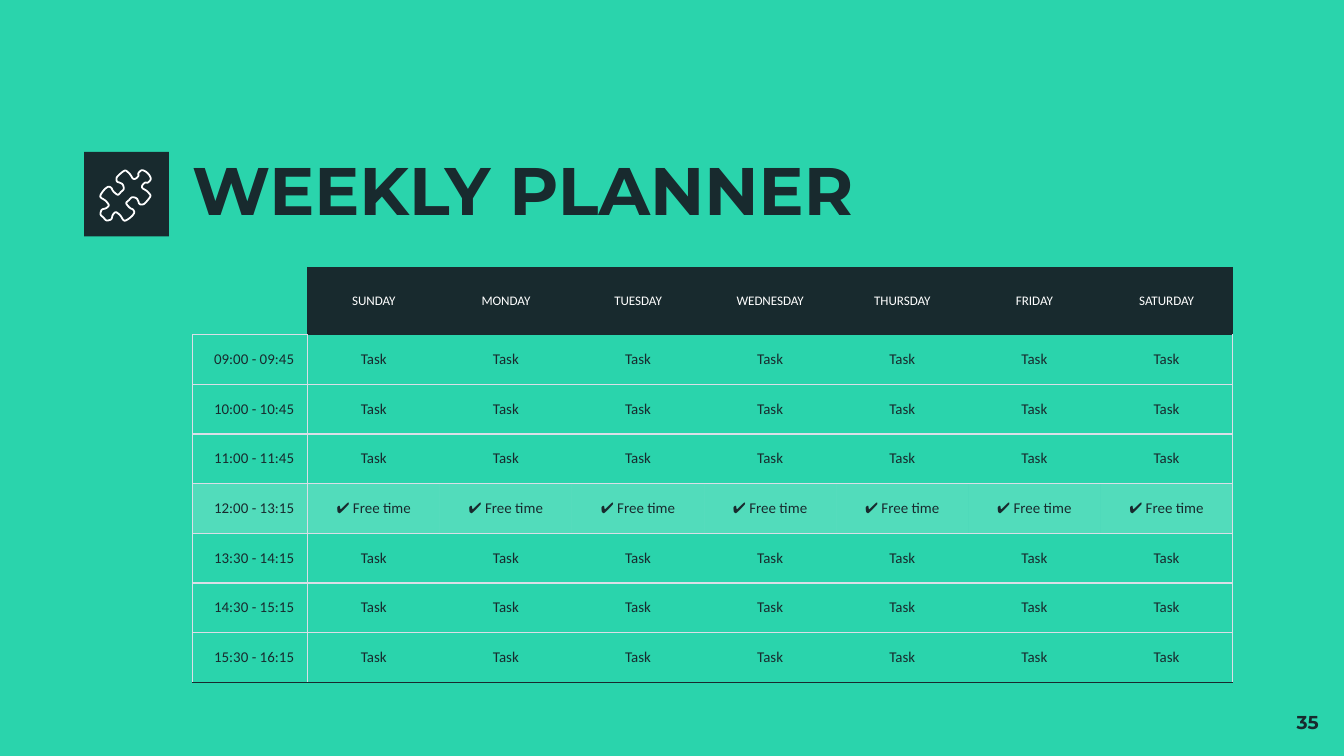
"""Build a weekly planner slide with a timetable and a puzzle icon."""
from dataclasses import dataclass
from typing import NamedTuple

import lxml.etree
import pptx
import pptx.dml.color
import pptx.enum.shapes
import pptx.enum.text
import pptx.oxml.ns
import pptx.util

PX = 3048
COLORS = {"teal": "2AD4AC", "ink": "182A2E", "white": "FFFFFF", "line": "DADEE7"}
ALIGN = pptx.enum.text.PP_ALIGN
MIDDLE = pptx.enum.text.MSO_ANCHOR.MIDDLE
NO_STYLE = "{2D5ABB26-0587-4C30-8999-92F81FD0307C}"

DAYS = ["SUNDAY", "MONDAY", "TUESDAY", "WEDNESDAY", "THURSDAY", "FRIDAY", "SATURDAY"]
TIME_W, DAY_W, HEAD_H, ROW_H, INSET = 257, 295, 146, 111, 30
BORDER_PT, SHADE_OPACITY = 0.75, 19

ICON_SPAN, ICON_UNIT, CURVE_STEPS = 37, 3, 4
TOP_SOCKET = [(32, 0), (30, 0), (28, 2), (28, 4), (26, 6), (24, 6), (22, 3)]
TOP_CORNER = [(20, 1), (18, 0), (15, 2), (12, 5), (12, 8), (14, 9), (16, 10)]
LEFT_SOCKET = [(17, 12), (17, 14), (15, 16), (13, 18), (11, 17), (9, 15), (8, 13)]
LEFT_CORNER = [(6, 12), (4, 13), (2, 15), (0, 18), (0, 20), (3, 22)]
LEFT_KNOB = [(5, 24), (6, 26), (4, 28), (1, 29), (0, 31), (0, 33)]
KNOB_TIP_TOP, KNOB_TIP_BOTTOM = (35, 2), (2, 35)


class Box(NamedTuple):
    x: int
    y: int
    w: int
    h: int

    def emu(self) -> list[int]:
        return [v * PX for v in self]


@dataclass
class Slot:
    time: str
    entry: str = "Task"
    shaded: bool = False


SLOTS = [
    Slot("09:00 - 09:45"),
    Slot("10:00 - 10:45"),
    Slot("11:00 - 11:45"),
    Slot("12:00 - 13:15", "✔ Free time", True),
    Slot("13:30 - 14:15"),
    Slot("14:30 - 15:15"),
    Slot("15:30 - 16:15"),
]


def rgb(name: str) -> pptx.dml.color.RGBColor:
    return pptx.dml.color.RGBColor.from_string(COLORS[name])


def add_xml(parent, tag: str, **attributes: str):
    return lxml.etree.SubElement(parent, pptx.oxml.ns.qn(tag), **attributes)


def write(tf, text: str, *, size: float, font: str = "Calibri", color: str = "ink",
          bold: bool = False, align=ALIGN.LEFT, spacing: float = 1.0) -> None:
    p = tf.paragraphs[0]
    p.alignment, p.line_spacing = align, spacing
    r = p.add_run()
    r.text = text
    r.font.size, r.font.name, r.font.bold = pptx.util.Pt(size), font, bold
    r.font.color.rgb = rgb(color)


def set_margins(target, px: int) -> None:
    for side in ("left", "top", "right", "bottom"):
        setattr(target, f"margin_{side}", px * PX)


def set_borders(cell, edges: dict[str, str]) -> None:
    tcPr = cell._tc.get_or_add_tcPr()
    for side in "LRTB":
        ln = add_xml(tcPr, f"a:ln{side}", w=str(pptx.util.Pt(BORDER_PT)))
        if side in edges:
            add_xml(add_xml(ln, "a:solidFill"), "a:srgbClr", val=COLORS[edges[side]])
        else:
            add_xml(ln, "a:noFill")


def fill_cell(cell, color: str, opacity: int = 100) -> None:
    cell.fill.solid()
    cell.fill.fore_color.rgb = rgb(color)
    if opacity < 100:
        solid = cell._tc.tcPr.find(pptx.oxml.ns.qn("a:solidFill"))
        add_xml(solid[0], "a:alpha", val=str(opacity * 1000))


def header_edges(col: int) -> dict[str, str]:
    if col == 0:
        return {"R": "ink", "B": "line"}
    edges = {"T": "ink", "B": "ink"}
    if col == 1:
        edges["L"] = "ink"
    if col == len(DAYS):
        edges["R"] = "ink"
    return edges


def slot_edges(row: int, col: int) -> dict[str, str]:
    under_header = row == 1 and col > 0
    edges = {"T": "ink" if under_header else "line",
             "B": "ink" if row == len(SLOTS) else "line"}
    if col in (0, 1):
        edges["L"] = "line"
    if col in (0, len(DAYS)):
        edges["R"] = "line"
    return edges


def draw_header(table) -> None:
    for col, text in enumerate(["", *DAYS]):
        cell = table.cell(0, col)
        write(cell.text_frame, text, size=7, color="white", align=ALIGN.CENTER)
        set_borders(cell, header_edges(col))
        if text:
            fill_cell(cell, "ink")


def draw_slot(table, row: int, slot: Slot) -> None:
    for col, text in enumerate([slot.time] + [slot.entry] * len(DAYS)):
        cell = table.cell(row, col)
        write(cell.text_frame, text, size=8, align=ALIGN.CENTER if col else ALIGN.RIGHT)
        set_borders(cell, slot_edges(row, col))
        if slot.shaded:
            fill_cell(cell, "white", SHADE_OPACITY)
        else:
            cell.fill.background()


def draw_planner(s, x: int, y: int) -> None:
    widths = [TIME_W] + [DAY_W] * len(DAYS)
    heights = [HEAD_H] + [ROW_H] * len(SLOTS)
    box = Box(x, y, sum(widths), sum(heights))
    table = s.shapes.add_table(len(heights), len(widths), *box.emu()).table
    table.first_row = table.horz_banding = False
    table._tbl.tblPr.find(pptx.oxml.ns.qn("a:tableStyleId")).text = NO_STYLE
    for column, width in zip(table.columns, widths):
        column.width = width * PX
    for row, height in zip(table.rows, heights):
        row.height = height * PX
    for cell in table.iter_cells():
        set_margins(cell, INSET)
        cell.vertical_anchor = MIDDLE
    draw_header(table)
    for row, slot in enumerate(SLOTS, start=1):
        draw_slot(table, row, slot)


def puzzle_outline() -> list[tuple[int, int]]:
    half = TOP_SOCKET + TOP_CORNER + LEFT_SOCKET + LEFT_CORNER + LEFT_KNOB
    mirrored = [(ICON_SPAN - y, ICON_SPAN - x) for x, y in reversed(half)]
    return [KNOB_TIP_TOP, *half, KNOB_TIP_BOTTOM, *mirrored]


def spline(before: float, start: float, end: float, after: float, t: float) -> float:
    linear = end - before
    square = 2 * before - 5 * start + 4 * end - after
    cube = 3 * start - before - 3 * end + after
    return start + (linear * t + square * t ** 2 + cube * t ** 3) / 2


def smooth(points: list[tuple[int, int]]) -> list[tuple[float, float]]:
    curve = []
    for i in range(len(points)):
        xs, ys = zip(*(points[(i + k) % len(points)] for k in (-1, 0, 1, 2)))
        for step in range(CURVE_STEPS):
            t = step / CURVE_STEPS
            curve.append((spline(*xs, t), spline(*ys, t)))
    return curve


def draw_tile(s, box: Box) -> None:
    sp = s.shapes.add_shape(pptx.enum.shapes.MSO_SHAPE.RECTANGLE, *box.emu())
    sp.shadow.inherit = False
    sp.fill.solid()
    sp.fill.fore_color.rgb = rgb("ink")
    sp.line.fill.background()


def draw_puzzle(s, left: int, top: int) -> None:
    points = [((left + x * ICON_UNIT) * PX, (top + y * ICON_UNIT) * PX)
              for x, y in smooth(puzzle_outline())]
    fb = s.shapes.build_freeform(*points[0], scale=1.0)
    fb.add_line_segments(points[1:], close=True)
    sp = fb.convert_to_shape()
    sp.shadow.inherit = False
    sp.fill.background()
    sp.line.color.rgb = rgb("white")
    sp.line.width = pptx.util.Pt(0.96)


def draw_title(s, box: Box) -> None:
    sp = s.shapes.title
    sp.left, sp.top, sp.width, sp.height = box.emu()
    tf = sp.text_frame
    set_margins(tf, 0)
    tf.vertical_anchor, tf.word_wrap = MIDDLE, True
    tf.auto_size = pptx.enum.text.MSO_AUTO_SIZE.NONE
    write(tf, "WEEKLY PLANNER", size=36, font="Montserrat", bold=True, spacing=0.9)


def draw_page_number(s, box: Box) -> None:
    tf = s.shapes.add_textbox(*box.emu()).text_frame
    tf.word_wrap = True
    set_margins(tf, INSET)
    write(tf, "35", size=10, font="Montserrat", bold=True, align=ALIGN.RIGHT)


def main() -> None:
    prs = pptx.Presentation()
    prs.slide_width, prs.slide_height = 3000 * PX, 1688 * PX
    s = prs.slides.add_slide(prs.slide_layouts[5])
    s.background.fill.solid()
    s.background.fill.fore_color.rgb = rgb("teal")
    draw_tile(s, Box(188, 339, 189, 189))
    draw_title(s, Box(429, 339, 2364, 189))
    draw_page_number(s, Box(2793, 1563, 180, 125))
    draw_planner(s, 430, 597)
    draw_puzzle(s, 225, 381)
    prs.save("out.pptx")


if __name__ == "__main__":
    main()
